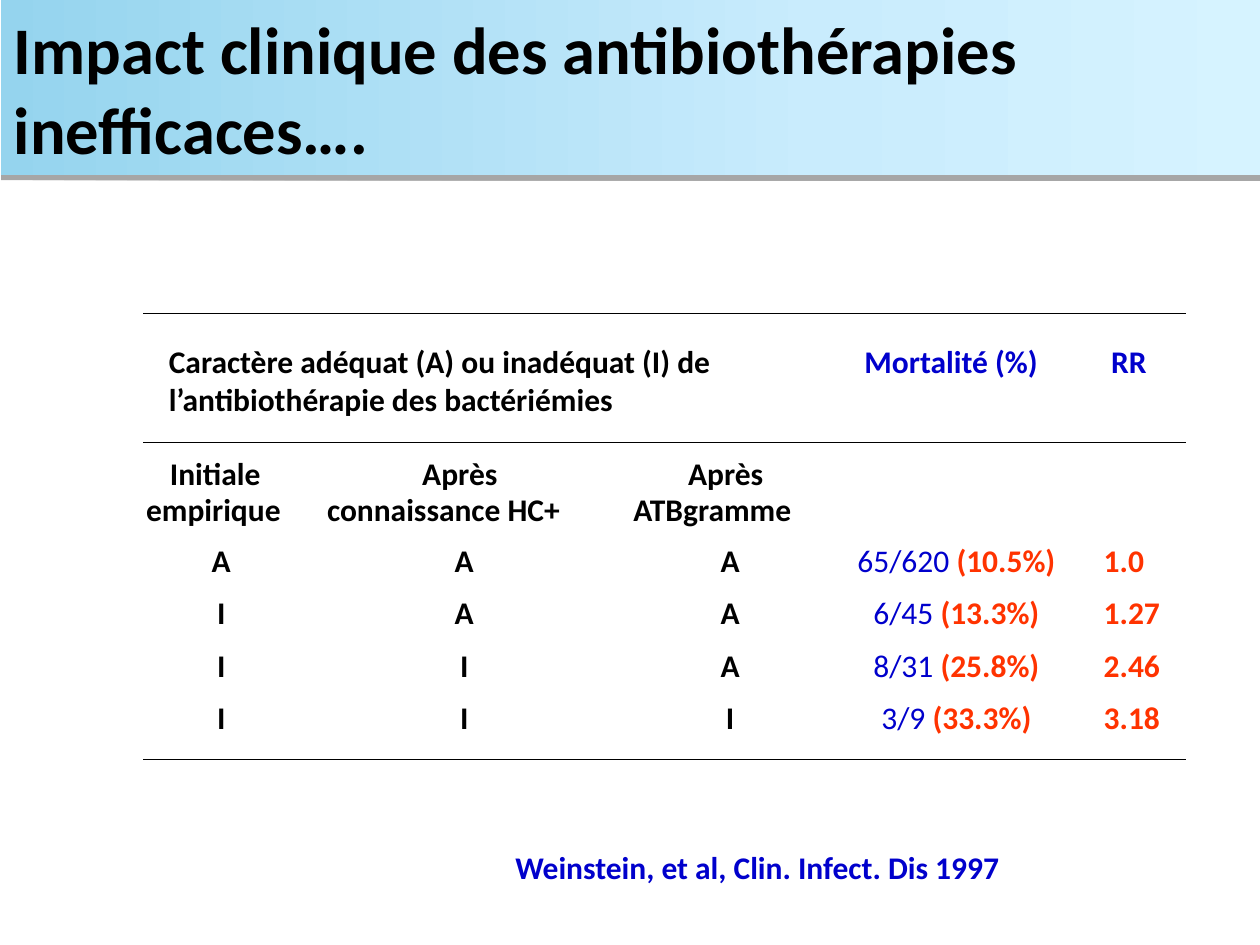
from copy import deepcopy

from lxml import etree
from pptx import Presentation
from pptx.dml.color import RGBColor
from pptx.enum.shapes import MSO_CONNECTOR
from pptx.enum.text import MSO_ANCHOR, MSO_AUTO_SIZE, PP_ALIGN
from pptx.oxml.ns import qn
from pptx.util import Pt

LEFT, CENTER = PP_ALIGN.LEFT, PP_ALIGN.CENTER
MIDDLE = MSO_ANCHOR.MIDDLE
FIXED = MSO_AUTO_SIZE.NONE
LINE = MSO_CONNECTOR.STRAIGHT

BLACK, BLUE, RED = "000000", "0000CC", "FF3300"
STOPS = [(0, "95D4EE"), (0.65, "C9ECFD"), (1, "D6F3FF")]


def color(code):
    return RGBColor.from_string(code)


class Page:
    font = "Calibri"
    size = 18
    high = 21.6

    def __init__(self, slide):
        self.slide = slide

    def style(self, font, code, size=None, bold=True):
        font.name = self.font
        font.size = Pt(size or self.size)
        font.bold = bold
        font.color.rgb = color(code)

    def title(self, text, left, top, width, height):
        shape = self.slide.shapes.title
        shape.left, shape.top = Pt(left), Pt(top)
        shape.width, shape.height = Pt(width), Pt(height)
        fill = shape.fill
        fill.gradient()
        fill.gradient_angle = 0
        props = shape.element.spPr
        stops = props.find(".//" + qn("a:gsLst"))
        stops.insert(1, deepcopy(stops[0]))
        for stop, (place, code) in zip(fill.gradient_stops, STOPS):
            stop.position = place
            stop.color.rgb = color(code)
        shape.line.fill.background()
        self.shade(props)
        frame = shape.text_frame
        frame.text = text
        frame.auto_size = FIXED
        frame.vertical_anchor = MIDDLE
        para = frame.paragraphs[0]
        para.alignment = LEFT
        self.style(para.font, BLACK, 38)

    def shade(self, props):
        effect = etree.SubElement(props, qn("a:effectLst"))
        shadow = etree.SubElement(effect, qn("a:outerShdw"), blurRad="0",
                                  dist=str(Pt(3)), dir="5400000", rotWithShape="0")
        tint = etree.SubElement(shadow, qn("a:srgbClr"), val=BLACK)
        etree.SubElement(tint, qn("a:alpha"), val="35000")

    def text(self, text, left, top, width, code=BLACK, align=LEFT, wrap=False, lines=1):
        box = self.slide.shapes.add_textbox(Pt(left), Pt(top), Pt(width), Pt(self.high * lines))
        frame = box.text_frame
        frame.margin_left = frame.margin_right = frame.margin_top = frame.margin_bottom = 0
        frame.word_wrap = wrap
        para = frame.paragraphs[0]
        para.text = text
        para.alignment = align
        self.style(para.font, code)
        return para

    def mid(self, text, center, top, width, code=BLACK):
        return self.text(text, center - width / 2, top, width, code, CENTER)

    def rate(self, count, share, center, top, width):
        para = self.mid(count + " ", center, top, width, BLUE)
        self.style(para.runs[0].font, BLUE, bold=False)
        run = para.add_run()
        run.text = share
        self.style(run.font, RED)

    def rule(self, left, right, y):
        line = self.slide.shapes.add_connector(LINE, Pt(left), Pt(y), Pt(right), Pt(y))
        line.line.color.rgb = color(BLACK)
        line.line.width = Pt(0.75)
        etree.SubElement(line.element.spPr, qn("a:effectLst"))


HEADS = [
    ("Initiale", 123, 259.2, 54), ("empirique", 122, 280.2, 80),
    ("Après", 262.8, 259.2, 45), ("connaissance HC+", 253.5, 280.2, 136),
    ("Après", 414.7, 259.2, 45), ("ATBgramme", 407, 280.2, 93),
]
MARKS = [126.4, 265.3, 417.2]
WIDE = {"A": 12, "I": 7}
ROWS = [
    ("AAA", "65/620", "(10.5%)", "1.0"),
    ("IAA", "6/45", "(13.3%)", "1.27"),
    ("IIA", "8/31", "(25.8%)", "2.46"),
    ("III", "3/9", "(33.3%)", "3.18"),
]


def main():
    deck = Presentation()
    deck.slide_width, deck.slide_height = Pt(720), Pt(540)
    page = Page(deck.slides.add_slide(deck.slide_layouts[5]))
    page.title("Impact clinique des antibiothérapies inefficaces….", 0.7, 0, 719.3, 100)
    page.text("Weinstein, et al, Clin. Infect. Dis 1997", 294.5, 484.6, 282, BLUE)
    page.text("Caractère adéquat (A) ou inadéquat (I) de l’antibiothérapie des bactériémies",
              96.5, 195.3, 371.5, wrap=True, lines=2)
    page.text("Mortalité (%)", 494, 195.3, 102, BLUE)
    page.text("RR", 635, 195.3, 24, BLUE)
    for head in HEADS:
        page.mid(*head)
    for i, (marks, count, share, ratio) in enumerate(ROWS):
        top = 309 + 30 * i
        for mark, center in zip(marks, MARKS):
            page.mid(mark, center, top, WIDE[mark])
        page.rate(count, share, 546.5, top, 118)
        page.text(ratio, 630.7, top, 36, RED)
    for y in (179.3, 252.7, 434.2):
        page.rule(82, 677.5, y)
    deck.save("out.pptx")


if __name__ == "__main__":
    main()
